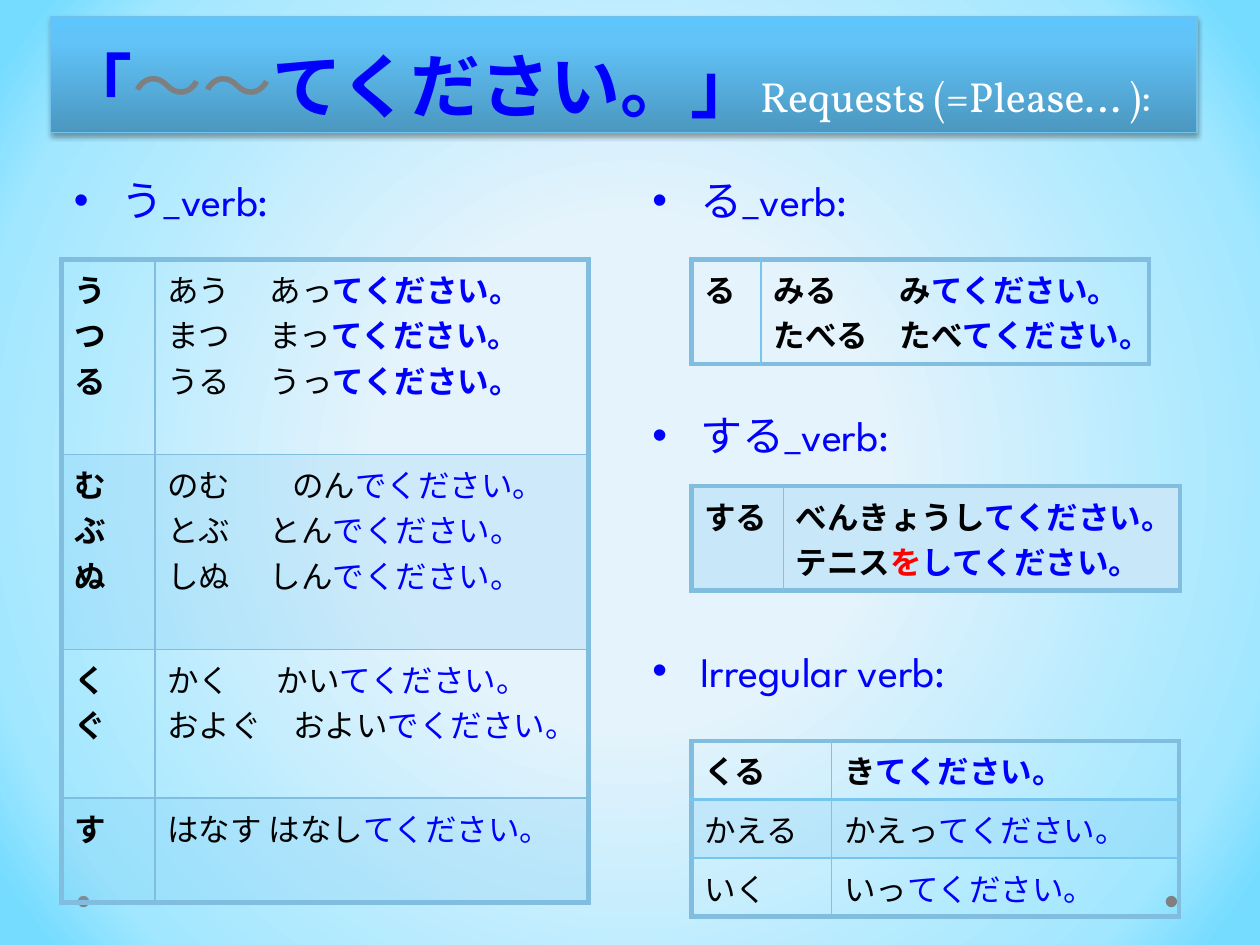
"""Build a slide on Japanese polite requests with the te-form."""
import pptx
import pptx.dml.color
import pptx.enum.shapes
import pptx.enum.text
import pptx.oxml
import pptx.oxml.ns
import pptx.util

Cm, Pt = pptx.util.Cm, pptx.util.Pt
NS = pptx.oxml.ns.nsdecls("a")
CJK = "Noto Sans CJK JP"
COLORS = {
    "ink": "000000", "blue": "0000FF", "red": "FF0000", "white": "FFFFFF",
    "wave": "7F7F7F", "dot": "808080", "frame": "80BDDF", "rule": "76C5EF",
    "edge": "70C2ED", "band": "76C5EF", "pale": "C8E8F9",
}
LOOKS = {
    "stem": ("ink", {"name": CJK, "size": Pt(18), "bold": False}),
    "plain": ("ink", {"name": "Vollkorn", "size": Pt(18), "bold": False}),
    "bold": ("ink", {"name": "Vollkorn", "size": Pt(18), "bold": True}),
    "end": ("blue", {"name": "Vollkorn", "size": Pt(18), "bold": False}),
    "strong": ("blue", {"name": "Vollkorn", "size": Pt(18), "bold": True}),
    "particle": ("red", {"name": "Vollkorn", "size": Pt(18), "bold": True}),
    "heading": ("blue", {"name": "League Spartan", "size": Pt(24), "bold": False}),
    "title": ("blue", {"name": "Vollkorn", "size": Pt(40), "bold": True}),
    "wave": ("wave", {"name": "Vollkorn", "size": Pt(40), "bold": False}),
    "gloss": ("white", {"name": "Vollkorn", "size": Pt(24), "bold": False}),
}
TE, DE = "てください。", "でください。"


def rgb(name):
    return pptx.dml.color.RGBColor.from_string(COLORS[name])


def xml(text):
    head, tail = text.split(">", 1)
    slash = "/" if head.endswith("/") else ""
    return pptx.oxml.parse_xml(f"{head.rstrip('/')} {NS}{slash}>{tail}")


def add_run(p, text, look):
    color, values = LOOKS[look]
    r = p.add_run()
    r.text = text
    for name, value in values.items():
        setattr(r.font, name, value)
    r.font.color.rgb = rgb(color)
    r.font._element.append(xml(f'<a:ea typeface="{CJK}"/>'))


def set_gradient(owner, fill, stops, direction):
    fill.gradient()
    grad = owner.element.xpath(".//a:gradFill")[0]
    grad[:] = []
    marks = "".join(f'<a:gs pos="{pos * 1000}"><a:srgbClr val="{color}"/></a:gs>'
                    for pos, color in stops)
    grad.append(xml(f"<a:gsLst>{marks}</a:gsLst>"))
    grad.append(xml(direction))


def add_dot(slide, left):
    oval = pptx.enum.shapes.MSO_SHAPE.OVAL
    sp = slide.shapes.add_shape(oval, Cm(left), Cm(18.06), Cm(0.23), Cm(0.23))
    sp.shadow.inherit = False
    sp.fill.solid()
    sp.fill.fore_color.rgb = rgb("dot")
    sp.line.fill.background()


def add_title(slide, runs):
    rect = pptx.enum.shapes.MSO_SHAPE.RECTANGLE
    sp = slide.shapes.add_shape(rect, Cm(1.02), Cm(0.33), Cm(23.11), Cm(2.34))
    set_gradient(sp, sp.fill, [(0, "4B97C0"), (80, "61C4F9"), (100, "5EC6FD")],
                 '<a:lin ang="16200000" scaled="0"/>')
    sp.line.color.rgb = rgb("edge")
    sp.line.width = Pt(0.75)
    sp.shadow.inherit = False
    sp.element.spPr.xpath("a:effectLst")[0].append(xml(
        f'<a:outerShdw blurRad="{Pt(3.1)}" dist="{Pt(1.8)}" dir="5400000">'
        '<a:srgbClr val="000000"><a:alpha val="35000"/></a:srgbClr></a:outerShdw>'))
    tf = sp.text_frame
    tf.word_wrap = True
    tf.vertical_anchor = pptx.enum.text.MSO_ANCHOR.BOTTOM
    p = tf.paragraphs[0]
    p.alignment = pptx.enum.text.PP_ALIGN.LEFT
    p.line_spacing = Pt(58)
    for text, look in runs:
        add_run(p, text, look)


def add_heading(slide, left, top, text):
    sp = slide.shapes.add_textbox(Cm(left), Cm(top), Cm(11.23), Cm(1.4))
    tf = sp.text_frame
    tf.word_wrap = True
    p = tf.paragraphs[0]
    pPr = p._p.get_or_add_pPr()
    pPr.set("marL", str(Cm(0.97)))
    pPr.set("indent", str(-Cm(0.97)))
    pPr.append(xml('<a:buFont typeface="Arial"/>'))
    pPr.append(xml('<a:buChar char="•"/>'))
    add_run(p, text, "heading")


def set_borders(cell, sides):
    tcPr = cell._tc.get_or_add_tcPr()
    for i, (side, (color, width)) in enumerate(sides.items()):
        tcPr.insert(i, xml(
            f'<a:ln{side} w="{Pt(width)}"><a:solidFill><a:srgbClr '
            f'val="{COLORS[color]}"/></a:solidFill></a:ln{side}>'))


def set_fill(cell, fill):
    if fill is None:
        cell.fill.background()
        return
    cell.fill.solid()
    cell.fill.fore_color.rgb = rgb(fill)
    if fill == "band":
        cell._tc.tcPr.xpath("a:solidFill/a:srgbClr")[0].append(
            xml('<a:alpha val="20000"/>'))


def fill_text(cell, lines):
    tf = cell.text_frame
    for i, (tab, *runs) in enumerate(lines):
        p = tf.add_paragraph() if i else tf.paragraphs[0]
        if tab:
            p._p.get_or_add_pPr().append(xml(
                f'<a:tabLst><a:tab pos="{Cm(tab)}" algn="l"/></a:tabLst>'))
        for text, look in runs:
            add_run(p, text, look)


def add_verbs(slide, at, widths, heights, rows, fills, inner, head=1):
    left, top = at
    table = slide.shapes.add_table(len(rows), 2, Cm(left), Cm(top),
                                   Cm(sum(widths)), Cm(sum(heights))).table
    table.first_row = table.horz_banding = False
    for column, width in zip(table.columns, widths):
        column.width = Cm(width)
    outer, thin = ("frame", 3), (inner, 1)
    last = len(rows) - 1
    for i, (row, height, fill) in enumerate(zip(rows, heights, fills)):
        table.rows[i].height = Cm(height)
        above = (inner, head) if i == 1 else thin
        below = (inner, head) if i == 0 else thin
        for j, lines in enumerate(row):
            cell = table.cell(i, j)
            set_fill(cell, fill)
            set_borders(cell, {"L": thin if j else outer, "R": outer if j else thin,
                               "T": above if i else outer,
                               "B": below if i < last else outer})
            fill_text(cell, lines)


def keys(*words, look="bold"):
    return [(0, (word, look)) for word in words]


def form(stem, ending, looks=("stem", "end"), tab=0):
    return (tab, (stem, looks[0]), (ending, looks[1]))


def main():
    prs = pptx.Presentation()
    prs.slide_width, prs.slide_height = Cm(25.4), Cm(19.05)
    slide = prs.slides.add_slide(prs.slide_layouts[6])
    set_gradient(slide, slide.background.fill,
                 [(32, "E4F3FC"), (84, "A1E7FF"), (95, "76DCFF")],
                 '<a:path path="circle"><a:fillToRect l="50000" t="50000" '
                 'r="50000" b="50000"/></a:path>')
    for left in (23.5, 1.57):
        add_dot(slide, left)
    add_title(slide, [("「", "title"), ("〜〜", "wave"), ("てください。」", "title"),
                      ("Requests (=Please… ):", "gloss")])
    add_heading(slide, 1.24, 3.4, "う_verb:")
    for i, text in enumerate(("る_verb:", "する_verb:", "Irregular verb:")):
        add_heading(slide, 12.9, 3.4 + 4.74 * i, text)

    mixed, strong, plain = ("stem", "strong"), ("bold", "strong"), ("plain", "end")
    u_rows = [
        (keys(*"うつる"), [form(s, TE, mixed, 2.06)
                         for s in ("あう\tあっ", "まつ\tまっ", "うる\tうっ")]),
        (keys(*"むぶぬ"), [form("のむ\tのん", DE, tab=2.52),
                         form("とぶ\tとん", DE, tab=2.06),
                         form("しぬ\tしん", DE, tab=2.06)]),
        (keys(*"くぐ"), [form("かく\tかい", TE, tab=2.2), form("およぐ　およい", DE)]),
        (keys("す"), [form("はなす はなし", TE)]),
    ]
    add_verbs(slide, (1.24, 5.23), (1.88, 8.74), (3.93, 3.93, 3, 2.1), u_rows,
              (None, "band", None, "band"), "frame")
    ru_rows = [(keys("る"), [form("みる\tみ", TE, strong, 2.54),
                            form("たべる　たべ", TE, strong)])]
    add_verbs(slide, (13.94, 5.23), (1.4, 7.82), (2.11,), ru_rows, (None,), "rule")
    suru_rows = [(keys("する"), [form("べんきょうし", TE, strong),
                               (0, ("テニス", "bold"), ("を", "particle"),
                                ("してください。", "strong"))])]
    add_verbs(slide, (13.94, 9.8), (1.85, 8), (2.11,), suru_rows, ("pale",), "rule")
    irregular_rows = [
        (keys("くる"), [form("き", TE, strong)]),
        (keys("かえる", look="plain"), [form("かえっ", TE, plain)]),
        (keys("いく", look="plain"), [form("いっ", TE, plain)]),
    ]
    add_verbs(slide, (13.94, 14.94), (2.82, 7.01), (1.18,) * 3, irregular_rows,
              (None, "band", None), "rule", head=2)
    prs.save("out.pptx")


if __name__ == "__main__":
    main()
